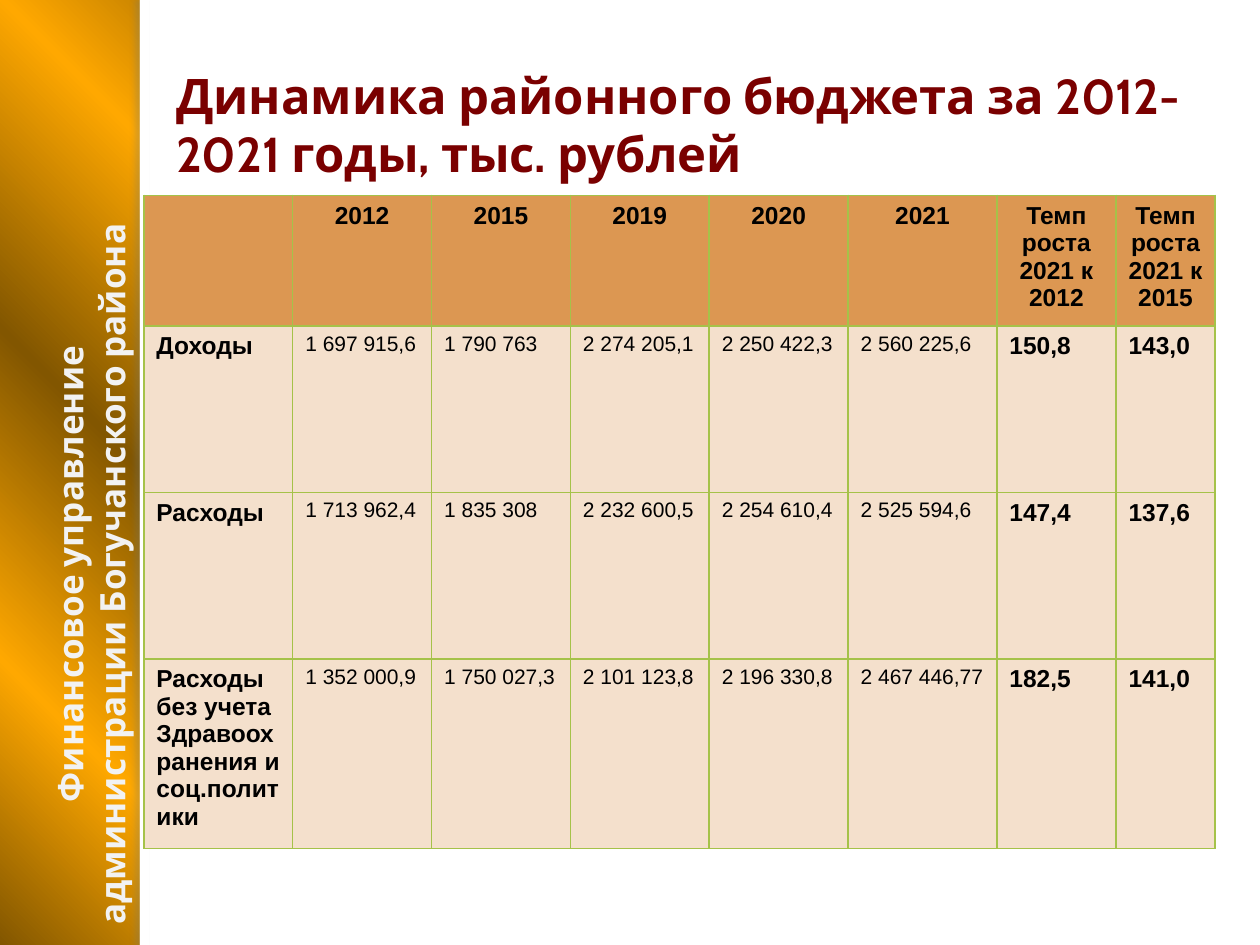
import dataclasses

import lxml.etree
import pptx
import pptx.dml.color
import pptx.enum.shapes
import pptx.enum.text
import pptx.oxml.ns
import pptx.util

Cm = pptx.util.Cm
Pt = pptx.util.Pt
RGB = pptx.dml.color.RGBColor.from_string
ALIGN = pptx.enum.text.PP_ALIGN
ANCHOR = pptx.enum.text.MSO_ANCHOR
qn = pptx.oxml.ns.qn


@dataclasses.dataclass(frozen=True)
class Theme:
    dark_gold: str = "825600"
    gold: str = "FFA800"
    paper: str = "FFFFFF"
    shade: str = "6C7A7C"
    side_text: str = "F2F2F2"
    title: str = "7A0000"
    cell: str = "CC6600"
    border: str = "A5C249"
    ink: str = "000000"
    display_font: str = "Cabin"
    table_font: str = "Arial"
    title_size: int = 28
    side_size: int = 20
    label_size: int = 14
    value_size: int = 12
    header_alpha: int = 68
    body_alpha: int = 20


class BudgetSlide:
    """Draws styled elements on one slide."""

    def __init__(self, slide, theme):
        self.slide = slide
        self.theme = theme

    def color(self, parent, value, alpha=100):
        rgb = lxml.etree.SubElement(parent, qn("a:srgbClr"), val=value)
        if alpha < 100:
            lxml.etree.SubElement(rgb, qn("a:alpha"), val=str(alpha * 1000))

    def backdrop(self, positions):
        fill = self.slide.background.fill
        fill.gradient()
        fill.gradient_angle = 45
        stops = self.slide.element.find(".//" + qn("a:gsLst"))
        for stop in list(stops):
            stops.remove(stop)
        for index, position in enumerate(positions):
            stop = lxml.etree.SubElement(stops, qn("a:gs"), pos=str(position * 1000))
            self.color(stop, (self.theme.dark_gold, self.theme.gold)[index % 2])

    def panel(self, left, width, shadowed=False):
        panel = self.slide.shapes.add_shape(
            pptx.enum.shapes.MSO_SHAPE.RECTANGLE, Cm(left), 0, Cm(width), Cm(19.05))
        panel.shadow.inherit = False
        panel.fill.solid()
        panel.fill.fore_color.rgb = RGB(self.theme.paper)
        panel.line.fill.background()
        if shadowed:
            effects = panel.element.spPr.find(qn("a:effectLst"))
            shadow = lxml.etree.SubElement(
                effects, qn("a:outerShdw"), blurRad=str(Pt(3)), dist=str(Pt(3)),
                dir=str(180 * 60000), rotWithShape="0")
            self.color(shadow, self.theme.shade, 25)

    def fill_text(self, frame, text, size, color, font, bold=True, align=ALIGN.LEFT):
        paragraph = frame.paragraphs[0]
        paragraph.alignment = align
        run = paragraph.add_run()
        run.text = text
        for name, value in {"size": Pt(size), "name": font, "bold": bold}.items():
            setattr(run.font, name, value)
        run.font.color.rgb = RGB(color)

    def text(self, box, text, size, color, rotation=0, anchor=ANCHOR.TOP, align=ALIGN.LEFT):
        label = self.slide.shapes.add_textbox(*map(Cm, box))
        label.rotation = rotation
        for name, value in {"word_wrap": True, "vertical_anchor": anchor}.items():
            setattr(label.text_frame, name, value)
        self.fill_text(label.text_frame, text, size, color, self.theme.display_font, align=align)

    def style_cell(self, cell, alpha):
        properties = cell._tc.get_or_add_tcPr()
        for side in ("a:lnL", "a:lnR", "a:lnT", "a:lnB"):
            line = lxml.etree.SubElement(properties, qn(side), w=str(Pt(1)))
            self.color(lxml.etree.SubElement(line, qn("a:solidFill")), self.theme.border)
        self.color(lxml.etree.SubElement(properties, qn("a:solidFill")), self.theme.cell, alpha)

    def table(self, left, top, widths, heights, rows):
        theme = self.theme
        table = self.slide.shapes.add_table(
            len(rows), len(widths), Cm(left), Cm(top), Cm(sum(widths)), Cm(sum(heights))).table
        for name, value in {"first_row": False, "horz_banding": False}.items():
            setattr(table, name, value)
        for column, width in zip(table.columns, widths):
            column.width = Cm(width)
        for row, height in zip(table.rows, heights):
            row.height = Cm(height)
        for r, values in enumerate(rows):
            for c, value in enumerate(values):
                cell = table.cell(r, c)
                amount = r > 0 and 1 <= c <= 5
                self.style_cell(cell, theme.body_alpha if r else theme.header_alpha)
                self.fill_text(cell.text_frame, value,
                               theme.value_size if amount else theme.label_size,
                               theme.ink, theme.table_font, bold=not amount,
                               align=ALIGN.LEFT if r else ALIGN.CENTER)


BUDGET = [
    ["", "2012", "2015", "2019", "2020", "2021",
     "Темп роста 2021 к 2012", "Темп роста 2021 к 2015"],
    ["Доходы", "1 697 915,6", "1 790 763", "2 274 205,1", "2 250 422,3",
     "2 560 225,6", "150,8", "143,0"],
    ["Расходы", "1 713 962,4", "1 835 308", "2 232 600,5", "2 254 610,4",
     "2 525 594,6", "147,4", "137,6"],
    ["Расходы без учета Здравоохранения и соц.политики", "1 352 000,9", "1 750 027,3",
     "2 101 123,8", "2 196 330,8", "2 467 446,77", "182,5", "141,0"],
]


def main():
    deck = pptx.Presentation()
    deck.slide_width, deck.slide_height = Cm(25.4), Cm(19.05)
    theme = Theme()
    budget = BudgetSlide(deck.slides.add_slide(deck.slide_layouts[6]), theme)
    budget.backdrop([0, 13, 28, 43, 58, 72, 87, 100])
    budget.panel(2.82, 22.58)
    budget.panel(2.82, 0.2, shadowed=True)
    budget.text((-5.64, 10.59, 14.94, 1.96),
                "Финансовое управление администрации Богучанского района",
                theme.side_size, theme.side_text, rotation=270, align=ALIGN.CENTER)
    budget.text((3.3, 0.91, 20.83, 3.18),
                "Динамика районного бюджета за 2012-2021 годы, тыс. рублей",
                theme.title_size, theme.title, anchor=ANCHOR.MIDDLE)
    budget.table(2.9, 3.94, [3] + [2.8] * 4 + [3, 2.4, 2], [2.62, 3.36, 3.36, 3.81], BUDGET)
    deck.save("out.pptx")


if __name__ == "__main__":
    main()
